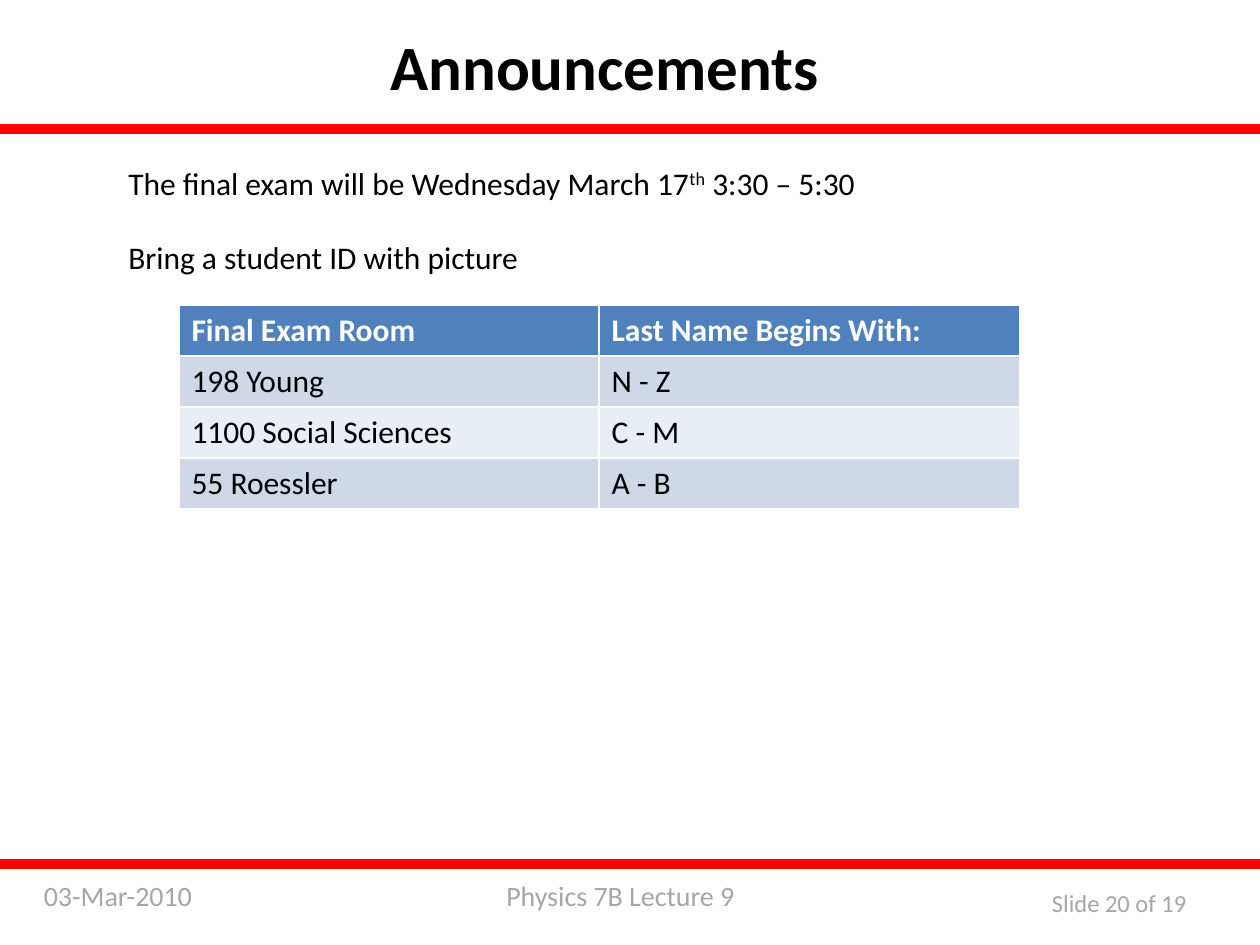
from pptx import Presentation
from pptx.dml.color import RGBColor
from pptx.enum import shapes
from pptx.util import Inches, Pt

BLACK = RGBColor(0, 0, 0)
WHITE = RGBColor(255, 255, 255)
GRAY = RGBColor(0xA6, 0xA6, 0xA6)
RED = RGBColor(255, 0, 0)
BLUE = RGBColor(0x4F, 0x81, 0xBD)
BANDS = [RGBColor(0xE9, 0xED, 0xF4), RGBColor(0xD0, 0xD8, 0xE8)]


def write(para, words, size=18, color=BLACK, bold=False, raised=False):
    run = para.add_run()
    run.text = words
    font = run.font
    font.name = "Calibri"
    font.size = Pt(size)
    font.bold = bold
    font.color.rgb = color
    if raised:
        run._r.get_or_add_rPr().set("baseline", "30000")


def add_box(left, top, width, height, wrap=False):
    box = slide.shapes.add_textbox(Inches(left), Inches(top), Inches(width), Inches(height))
    box.text_frame.word_wrap = wrap
    return box.text_frame


deck = Presentation()
deck.slide_width = Inches(10)
deck.slide_height = Inches(7.5)
slide = deck.slides.add_slide(deck.slide_layouts[6])

footer = [
    ("Physics 7B Lecture 9", 16, (3.92, 6.92, 2.04, 0.37)),
    ("03-Mar-2010", 16, (0.25, 6.92, 1.67, 0.37, True)),
    ("Slide 20 of 19", 14, (8.25, 7, 1.31, 0.34)),
]
for words, size, place in footer:
    write(add_box(*place).paragraphs[0], words, size=size, color=GRAY)

for top in (1, 6.83):
    bar = slide.shapes.add_shape(
        shapes.MSO_SHAPE.RECTANGLE, 0, Inches(top), deck.slide_width, Inches(0.05))
    bar.shadow.inherit = False
    bar.fill.solid()
    bar.fill.fore_color.rgb = RED
    bar.line.color.rgb = RED
    bar.line.width = Pt(2)

title = add_box(3, 0.17, 3.64, 0.71)
write(title.paragraphs[0], "Announcements", size=36, bold=True)

rooms = [
    ("Final Exam Room", "Last Name Begins With:"),
    ("198 Young", "N - Z"),
    ("1100 Social Sciences", "C - M"),
    ("55 Roessler", "A - B"),
]
table = slide.shapes.add_table(
    len(rooms), 2, Inches(1.42), Inches(2.42), Inches(6.67), Inches(1.62)).table
for row, names in enumerate(rooms):
    head = row == 0
    for col, words in enumerate(names):
        cell = table.cell(row, col)
        cell.fill.solid()
        cell.fill.fore_color.rgb = BLUE if head else BANDS[row % 2]
        write(cell.text_frame.paragraphs[0], words,
              color=WHITE if head else BLACK, bold=head)

body = add_box(0.92, 1.25, 6.06, 1.01)
exam = body.paragraphs[0]
write(exam, "The final exam will be Wednesday March 17")
write(exam, "th", raised=True)
write(exam, " 3:30 – 5:30")
card = body.add_paragraph()
card.space_before = Pt(21)
write(card, "Bring a student ID with picture")

deck.save("out.pptx")
